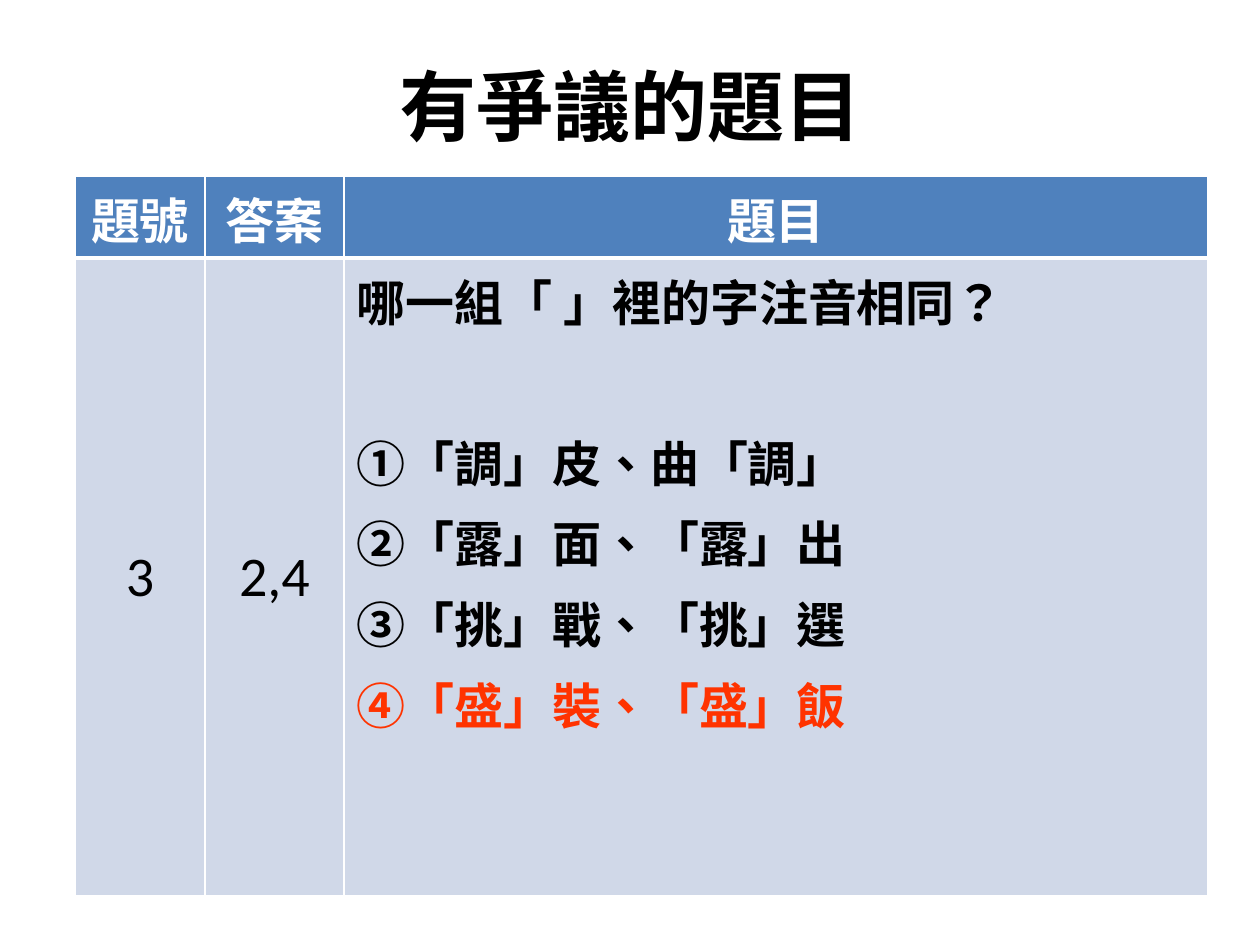
import lxml.etree
import pptx
import pptx.dml.color
import pptx.enum.text
import pptx.oxml.ns
import pptx.util

COLORS = {"black": "000000", "white": "FFFFFF", "header": "4F81BD",
          "body": "D0D8E8", "answer": "FF3300"}
LATIN, CJK = "Calibri", "Noto Sans CJK SC"
TITLE = "有爭議的題目"
HEADERS = ["題號", "答案", "題目"]
VALUES = ["3", "2,4"]
QUESTION = [
    ("哪一組「 」裡的字注音相同？", "black", 5.6),
    ("①「調」皮、曲「調」", "black", 51.7),
    ("②「露」面、「露」出", "black", 5.6),
    ("③「挑」戰、「挑」選", "black", 5.6),
    ("④「盛」裝、「盛」飯", "answer", 5.6),
]
COLUMNS = [130, 139, 864]
ROWS = [82, 638]
TITLE_BOX = (64, 26, 1134, 158)
TABLE_LEFT, TABLE_TOP = 75, 176
CENTER = pptx.enum.text.PP_ALIGN.CENTER
LEFT = pptx.enum.text.PP_ALIGN.LEFT
MIDDLE = pptx.enum.text.MSO_ANCHOR.MIDDLE
TOP = pptx.enum.text.MSO_ANCHOR.TOP


def px(length):
    return pptx.util.Emu(round(length * 914400 / 126))


def rgb(name):
    return pptx.dml.color.RGBColor.from_string(COLORS[name])


def write(para, text, size, color, bold, font, align=CENTER):
    para.alignment = align
    span = para.add_run()
    span.text = text
    span.font.size = pptx.util.Pt(size)
    span.font.bold = bold
    span.font.name = font
    span.font.color.rgb = rgb(color)
    properties = span.font._element
    properties.set("lang", "zh-TW")
    east_asian = lxml.etree.SubElement(properties, pptx.oxml.ns.qn("a:ea"))
    east_asian.set("typeface", CJK)


def style_cell(cell, fill, anchor, top_width, bottom_width):
    properties = cell._tc.get_or_add_tcPr()
    widths = {"L": 1, "R": 1, "T": top_width, "B": bottom_width}
    for side, width in widths.items():
        line = lxml.etree.SubElement(properties, pptx.oxml.ns.qn("a:ln" + side))
        line.set("w", str(pptx.util.Pt(width)))
        paint = lxml.etree.SubElement(line, pptx.oxml.ns.qn("a:solidFill"))
        color = lxml.etree.SubElement(paint, pptx.oxml.ns.qn("a:srgbClr"))
        color.set("val", COLORS["white"])
    cell.fill.solid()
    cell.fill.fore_color.rgb = rgb(fill)
    cell.vertical_anchor = anchor


def add_title(page):
    box = page.shapes.add_textbox(*map(px, TITLE_BOX))
    box.text_frame.word_wrap = True
    box.text_frame.vertical_anchor = MIDDLE
    write(box.text_frame.paragraphs[0], TITLE, 44, "black", True, CJK)


def add_question_table(page):
    frame = page.shapes.add_table(len(ROWS), len(COLUMNS), px(TABLE_LEFT),
                                  px(TABLE_TOP), px(sum(COLUMNS)), px(sum(ROWS)))
    table = frame.table
    for column, width in zip(table.columns, COLUMNS):
        column.width = px(width)
    for row, height in zip(table.rows, ROWS):
        row.height = px(height)
    for index, text in enumerate(HEADERS):
        cell = table.cell(0, index)
        style_cell(cell, "header", MIDDLE, 1, 3)
        write(cell.text_frame.paragraphs[0], text, 28, "white", True, LATIN)
    for index, text in enumerate(VALUES):
        cell = table.cell(1, index)
        style_cell(cell, "body", MIDDLE, 3, 1)
        write(cell.text_frame.paragraphs[0], text, 32, "black", False, LATIN)
    cell = table.cell(1, len(VALUES))
    style_cell(cell, "body", TOP, 3, 1)
    for index, (text, color, gap) in enumerate(QUESTION):
        body = cell.text_frame
        para = body.add_paragraph() if index else body.paragraphs[0]
        para.space_before = pptx.util.Pt(gap)
        write(para, text, 28, color, True, CJK, LEFT)


def main():
    deck = pptx.Presentation()
    deck.slide_width, deck.slide_height = px(1260), px(945)
    page = deck.slides.add_slide(deck.slide_layouts[6])
    add_title(page)
    add_question_table(page)
    deck.save("out.pptx")


if __name__ == "__main__":
    main()
